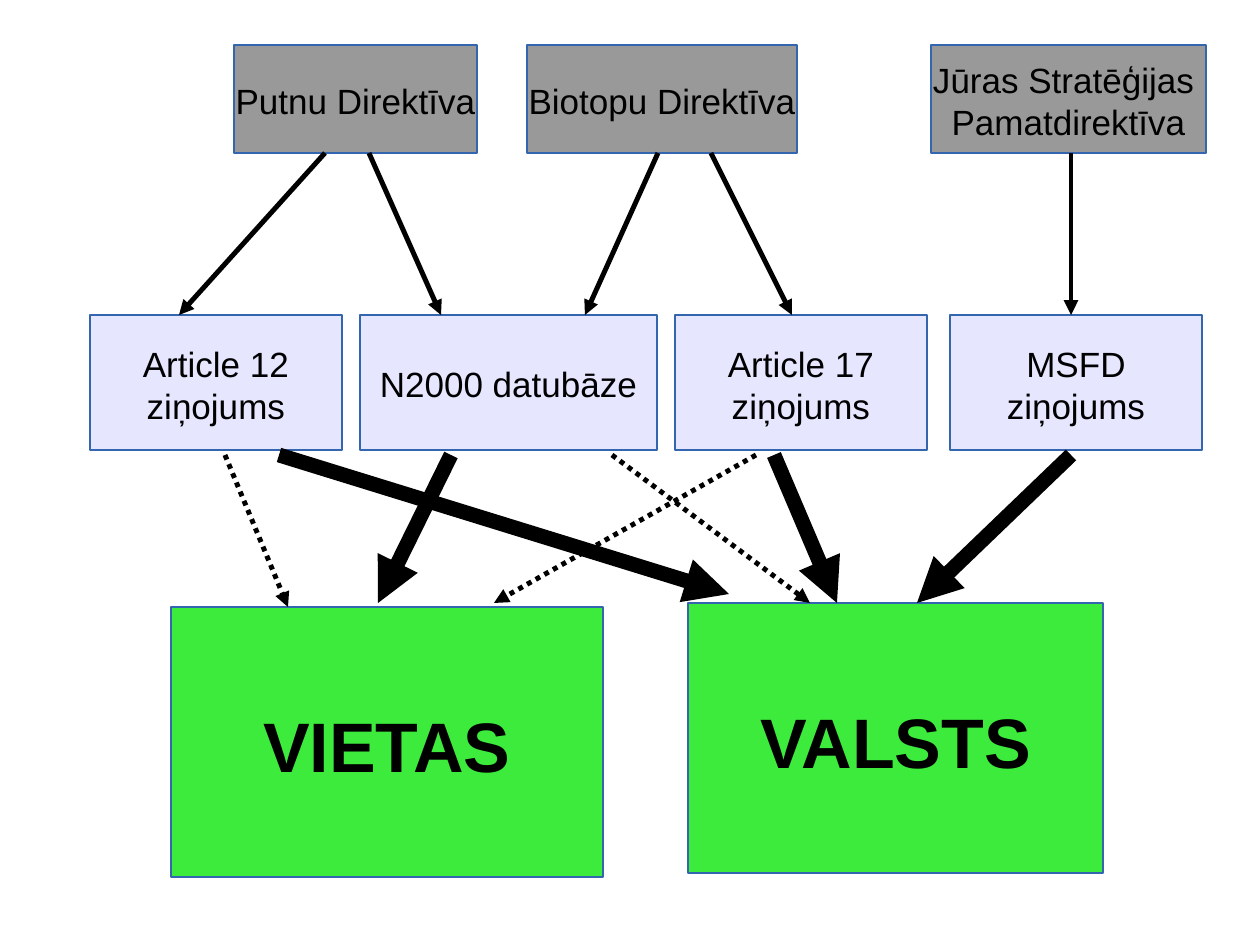
from lxml.etree import SubElement
from pptx import Presentation
from pptx.dml.color import RGBColor
from pptx.enum.dml import MSO_LINE
from pptx.enum.shapes import MSO_CONNECTOR, MSO_SHAPE
from pptx.enum.text import MSO_ANCHOR, PP_ALIGN
from pptx.oxml.ns import qn
from pptx.util import Pt

EMU_PER_PX = 914400 / 126
COLORS = {"directive": "999999", "report": "E6E6FF", "level": "3DEB3D",
          "border": "3465AF", "ink": "000000"}

BOX_STYLES = {
    "directive": {"font": {"size": Pt(20), "bold": False}, "inset_top": 8},
    "report": {"font": {"size": Pt(20), "bold": False}, "inset_top": 8},
    "level": {"font": {"size": Pt(40), "bold": True}, "inset_top": 10},
}
BOXES = [
    ("level", "VIETAS", 171, 607, 432, 270),
    ("level", "VALSTS", 688, 603, 415, 270),
    ("report", "N2000 datubāze", 360, 315, 297, 135),
    ("directive", "Biotopu Direktīva", 527, 45, 270, 108),
    ("directive", "Jūras Stratēģijas \nPamatdirektīva", 931, 45, 275, 108),
    ("directive", "Putnu Direktīva", 234, 45, 243, 108),
    ("report", "Article 12\nziņojums", 90, 315, 252, 135),
    ("report", "Article 17\nziņojums", 675, 315, 252, 135),
    ("report", "MSFD\nziņojums", 950, 315, 252, 135),
]

ARROW_STYLES = {
    "thin": {"width": Pt(2.83)},
    "thick": {"width": Pt(8.5)},
    "dotted": {"width": Pt(2.83), "dash_style": MSO_LINE.ROUND_DOT},
}
ARROWS = [
    ("thin", 1071, 153, 1071, 315),
    ("thin", 325, 153, 179, 315),
    ("thin", 369, 153, 441, 315),
    ("thin", 711, 153, 792, 315),
    ("thin", 658, 153, 585, 315),
    ("thick", 1071, 455, 917, 603),
    ("thick", 774, 455, 837, 603),
    ("dotted", 756, 455, 494, 603),
    ("thick", 451, 455, 378, 603),
    ("dotted", 612, 455, 810, 603),
    ("dotted", 225, 455, 288, 607),
    ("thick", 279, 455, 729, 594),
]


def px(value):
    return round(value * EMU_PER_PX)


def color(name):
    return RGBColor.from_string(COLORS[name])


def set_all(target, values):
    for name, value in values.items():
        setattr(target, name, value)


def add_box(slide, kind, text, *bounds):
    style = BOX_STYLES[kind]
    shape = slide.shapes.add_shape(MSO_SHAPE.RECTANGLE, *map(px, bounds))
    shape.shadow.inherit = False
    shape.fill.solid()
    shape.fill.fore_color.rgb = color(kind)
    shape.line.color.rgb = color("border")
    shape.line.width = Pt(0.75)
    frame = shape.text_frame
    set_all(frame, {"text": text, "word_wrap": False,
                    "vertical_anchor": MSO_ANCHOR.MIDDLE,
                    "margin_left": px(11), "margin_right": px(11),
                    "margin_top": px(style["inset_top"]), "margin_bottom": px(5)})
    for paragraph in frame.paragraphs:
        paragraph.alignment = PP_ALIGN.CENTER
        for run in paragraph.runs:
            set_all(run.font, {"name": "Arial", **style["font"]})
            run.font.color.rgb = color("ink")


def add_arrow(slide, kind, *ends):
    connector = slide.shapes.add_connector(MSO_CONNECTOR.STRAIGHT, *map(px, ends))
    connector.line.color.rgb = color("ink")
    set_all(connector.line, ARROW_STYLES[kind])
    properties = connector.element.spPr
    SubElement(properties.find(qn("a:ln")), qn("a:tailEnd"), type="triangle")
    SubElement(properties, qn("a:effectLst"))


def main():
    presentation = Presentation()
    presentation.slide_width, presentation.slide_height = px(1260), px(945)
    slide = presentation.slides.add_slide(presentation.slide_layouts[6])
    for box in BOXES:
        add_box(slide, *box)
    for arrow in ARROWS:
        add_arrow(slide, *arrow)
    presentation.save("out.pptx")


if __name__ == "__main__":
    main()
